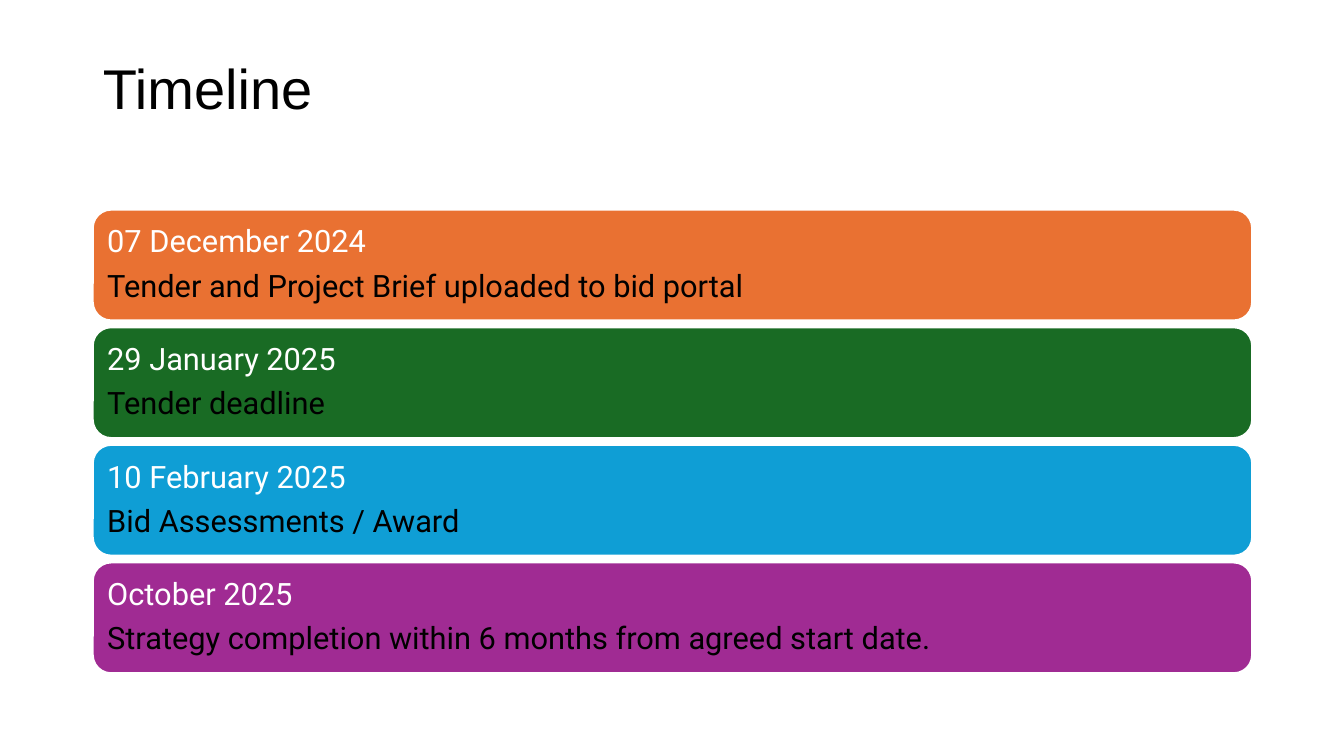
from pptx import Presentation
from pptx.dml.color import RGBColor
from pptx.enum.shapes import MSO_SHAPE
from pptx.enum.text import MSO_ANCHOR, MSO_AUTO_SIZE, PP_ALIGN
from pptx.util import Inches, Pt

ROUNDED = MSO_SHAPE.ROUNDED_RECTANGLE
TOP, MIDDLE = MSO_ANCHOR.TOP, MSO_ANCHOR.MIDDLE
NO_AUTOFIT = MSO_AUTO_SIZE.NONE
LEFT_ALIGNED = PP_ALIGN.LEFT

COLORS = {
    "orange": "E97132",
    "green": "196B24",
    "blue": "0F9ED5",
    "purple": "A02B93",
    "white": "FFFFFF",
    "black": "000000",
}
TITLE = "Timeline"
MILESTONES = [
    ("07 December 2024", "Tender and Project Brief uploaded to bid portal", "orange"),
    ("29 January 2025", "Tender deadline", "green"),
    ("10 February 2025", "Bid Assessments / Award", "blue"),
    ("October 2025", "Strategy completion within 6 months from agreed start date.", "purple"),
]

LEFT, WIDTH = 0.92, 11.5
TITLE_TOP, TITLE_HEIGHT = 0.61, 1.24
FIRST_BAR_TOP, LAST_BAR_TOP, BAR_HEIGHT = 2.08, 5.58, 1.1
BAR_PITCH = (LAST_BAR_TOP - FIRST_BAR_TOP) / (len(MILESTONES) - 1)
BAR_MARGIN = Inches(0.09)


def color(name):
    return RGBColor.from_string(COLORS[name])


def write(paragraph, text, font_name, size, color_name):
    paragraph.alignment = LEFT_ALIGNED
    paragraph.line_spacing = 0.9
    run = paragraph.add_run()
    run.text = text
    run.font.name = font_name
    run.font.size = Pt(size)
    run.font.color.rgb = color(color_name)


def add_title(slide):
    title = slide.shapes.title
    title.left, title.top = Inches(LEFT), Inches(TITLE_TOP)
    title.width, title.height = Inches(WIDTH), Inches(TITLE_HEIGHT)
    frame = title.text_frame
    frame.auto_size = NO_AUTOFIT
    frame.vertical_anchor = TOP
    frame.margin_top = 0
    write(frame.paragraphs[0], TITLE, "Arial", 40, "black")


def add_milestone(slide, top, date, event, fill):
    bar = slide.shapes.add_shape(
        ROUNDED, Inches(LEFT), Inches(top), Inches(WIDTH), Inches(BAR_HEIGHT))
    bar.shadow.inherit = False
    bar.fill.solid()
    bar.fill.fore_color.rgb = color(fill)
    bar.line.color.rgb = color("white")
    bar.line.width = Pt(1.5)

    frame = bar.text_frame
    frame.word_wrap = True
    frame.vertical_anchor = MIDDLE
    frame.margin_left = frame.margin_right = BAR_MARGIN
    frame.margin_top = frame.margin_bottom = BAR_MARGIN
    date_paragraph, event_paragraph = frame.paragraphs[0], frame.add_paragraph()
    write(date_paragraph, date, "Roboto", 22, "white")
    write(event_paragraph, event, "Roboto", 22, "black")
    for paragraph in frame.paragraphs:
        paragraph.space_after = Pt(7.7)


def main():
    presentation = Presentation()
    presentation.slide_width = Inches(13.33)
    presentation.slide_height = Inches(7.5)
    title_only = presentation.slide_layouts[5]
    slide = presentation.slides.add_slide(title_only)
    add_title(slide)
    for index, (date, event, fill) in enumerate(MILESTONES):
        add_milestone(slide, FIRST_BAR_TOP + index * BAR_PITCH, date, event, fill)
    presentation.save("out.pptx")


if __name__ == "__main__":
    main()
